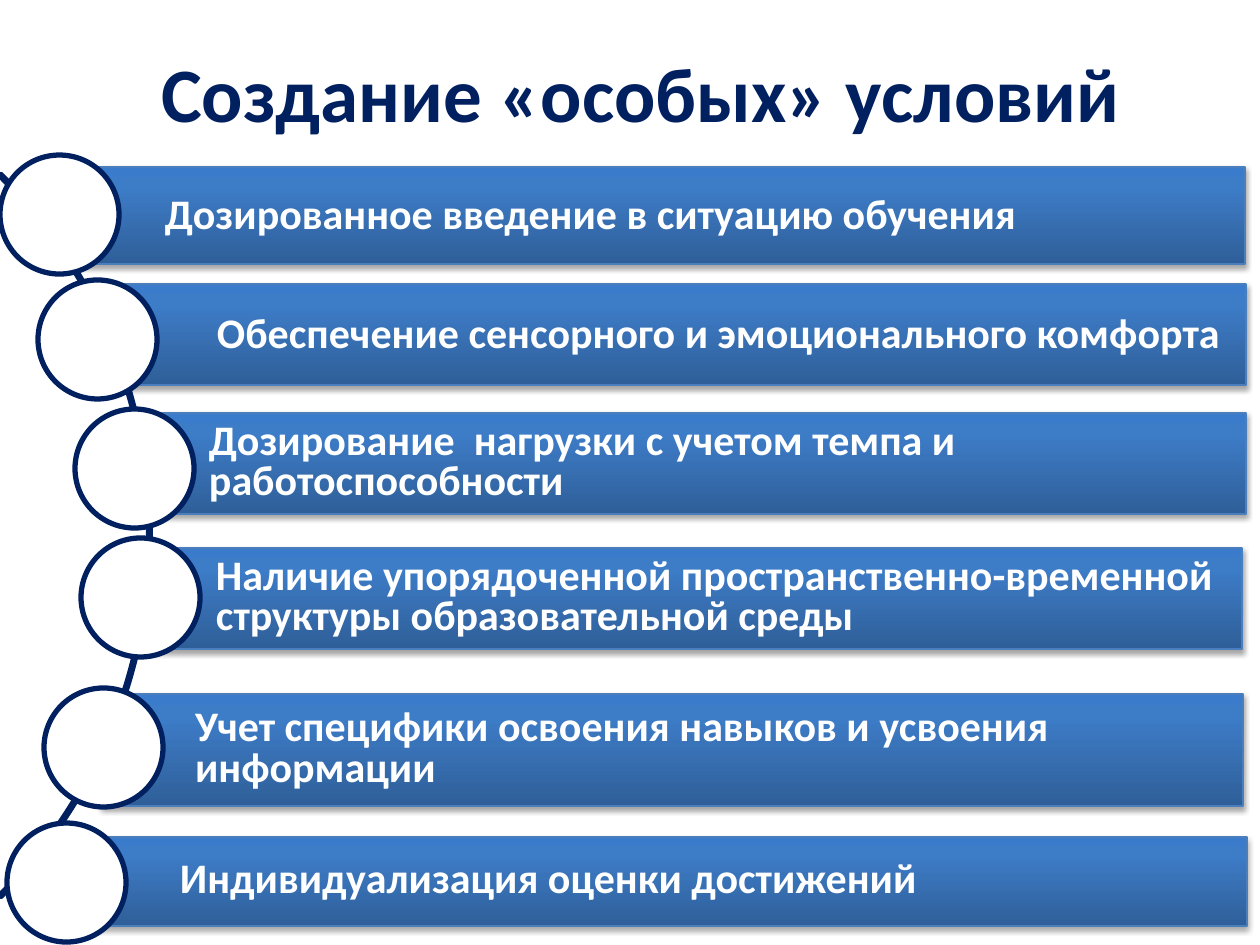
import copy

import pptx
import pptx.dml.color
import pptx.enum.shapes
import pptx.enum.text
import pptx.util
from lxml import etree
from pptx.oxml.ns import qn

RGB = pptx.dml.color.RGBColor
SHAPE = pptx.enum.shapes.MSO_SHAPE
ALIGN = pptx.enum.text.PP_ALIGN

NAVY = RGB(0x00, 0x20, 0x60)
WHITE = RGB(0xFF, 0xFF, 0xFF)
EDGE = RGB(0x4B, 0x7E, 0xBC)
BLUES = [
    (0, RGB(0x2F, 0x5F, 0x99)),
    (0.8, RGB(0x3D, 0x7C, 0xC7)),
    (1, RGB(0x3A, 0x7C, 0xCB)),
]
SCALE = 914400 / 126
DISC = 119

# text, bar box, disc corner, line spacing
ROWS = [
    ("Дозированное введение в ситуацию обучения",
     (72, 167, 1173, 97), (0, 155), 0.9),
    ("Обеспечение сенсорного и эмоционального комфорта",
     (124, 284, 1122, 101), (38, 280), 0.9),
    ("Дозирование  нагрузки с учетом темпа и работоспособности",
     (116, 413, 1130, 101), (75, 409), 0.8),
    ("Наличие упорядоченной пространственно-временной структуры "
     "образовательной среды",
     (123, 548, 1119, 101), (81, 538), 0.8),
    ("Учет специфики освоения навыков и усвоения информации",
     (102, 694, 1141, 112), (44, 688), 0.8),
    ("Индивидуализация оценки достижений",
     (87, 837, 1160, 89), (7, 823), 0.8),
]


def px(num):
    return pptx.util.Emu(round(num * SCALE))


def write(shape, text, size, color, pad, align=ALIGN.LEFT, lead=None, after=0):
    """Fill the shape with one bold paragraph; pad is left, top, right, bottom."""
    frame = shape.text_frame
    frame.word_wrap = True
    frame.auto_size = pptx.enum.text.MSO_AUTO_SIZE.NONE
    frame.vertical_anchor = pptx.enum.text.MSO_ANCHOR.MIDDLE
    (frame.margin_left, frame.margin_top,
     frame.margin_right, frame.margin_bottom) = map(px, pad)
    para = frame.paragraphs[0]
    para.alignment = align
    para.line_spacing = lead
    para.space_after = pptx.util.Pt(after)
    run = para.add_run()
    run.text = text
    font = run.font
    font.name = "Calibri"
    font.size = pptx.util.Pt(size)
    font.bold = True
    font.color.rgb = color


def add_form(slide, kind, box, line, width):
    shape = slide.shapes.add_shape(kind, *map(px, box))
    shape.shadow.inherit = False
    shape.line.color.rgb = line
    shape.line.width = pptx.util.Pt(width)
    return shape


def shade(shape):
    """Three-stop gradient from dark at the bottom to light at the top."""
    fill = shape.fill
    fill.gradient()
    fill.gradient_angle = 90
    first = fill.gradient_stops[0]
    stops = shape.element.spPr.find(".//" + qn("a:gsLst"))
    stops.append(copy.deepcopy(stops[0]))
    for stop, (pos, color) in zip(fill.gradient_stops, BLUES):
        stop.position = pos
        stop.color.rgb = color


def cast(shape):
    """Soft shadow straight below the shape."""
    effect = shape.element.spPr.find(qn("a:effectLst"))
    outer = etree.SubElement(
        effect, qn("a:outerShdw"), blurRad="40000", dist="23000",
        dir="5400000", rotWithShape="0")
    color = etree.SubElement(outer, qn("a:srgbClr"), val="000000")
    etree.SubElement(color, qn("a:alpha"), val="35000")


def add_arc(slide):
    arc = add_form(slide, SHAPE.BLOCK_ARC, (-872, 24, 1023, 1023), NAVY, 2.25)
    arc.fill.background()
    for idx, value in enumerate((189, 27, 0.003)):
        arc.adjustments[idx] = value


def add_bar(slide, text, box, lead):
    bar = add_form(slide, SHAPE.RECTANGLE, box, EDGE, 0.75)
    shade(bar)
    cast(bar)
    write(bar, text, 24, WHITE, (93, 9, 9, 9), lead=lead, after=6)


def add_disc(slide, left, top):
    disc = add_form(slide, SHAPE.OVAL, (left, top, DISC, DISC), NAVY, 3)
    disc.fill.solid()
    disc.fill.fore_color.rgb = WHITE


def set_title(slide, text):
    title = slide.shapes.title
    title.left, title.top, title.width, title.height = map(
        px, (146, 28, 1012, 128))
    write(title, text, 44, NAVY, (13, 6, 35, 6), align=ALIGN.CENTER)


def main():
    deck = pptx.Presentation()
    deck.slide_width, deck.slide_height = px(1260), px(945)
    slide = deck.slides.add_slide(deck.slide_layouts[5])
    set_title(slide, "Создание «особых» условий")
    add_arc(slide)
    for text, box, spot, lead in ROWS:
        add_bar(slide, text, box, lead)
        add_disc(slide, *spot)
    deck.save("out.pptx")


if __name__ == "__main__":
    main()
